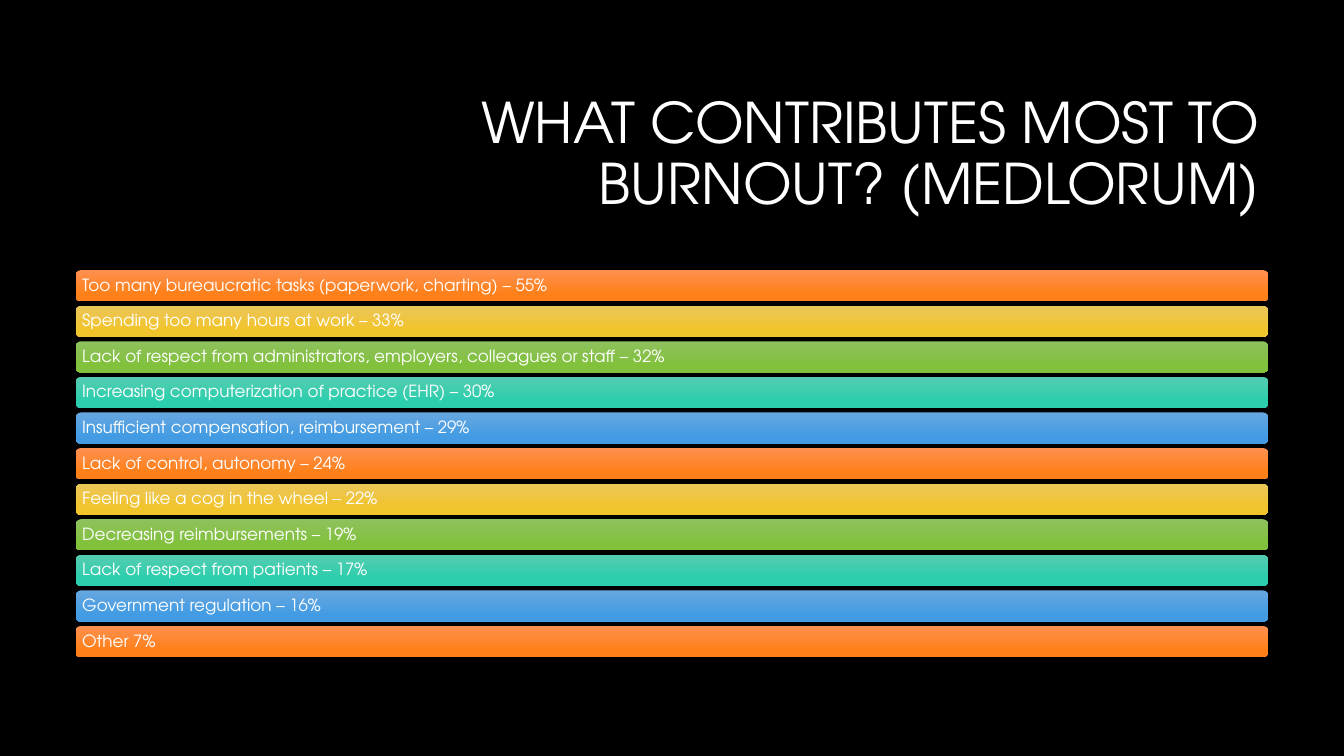
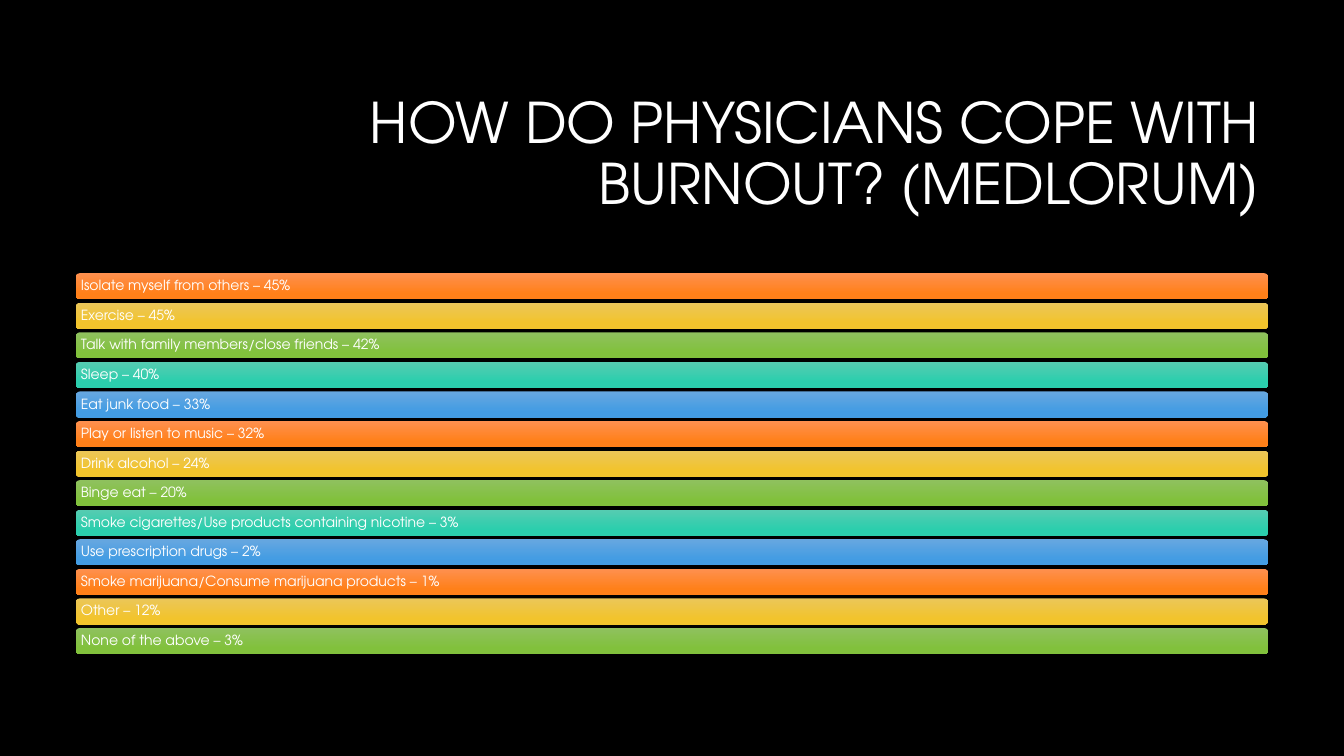
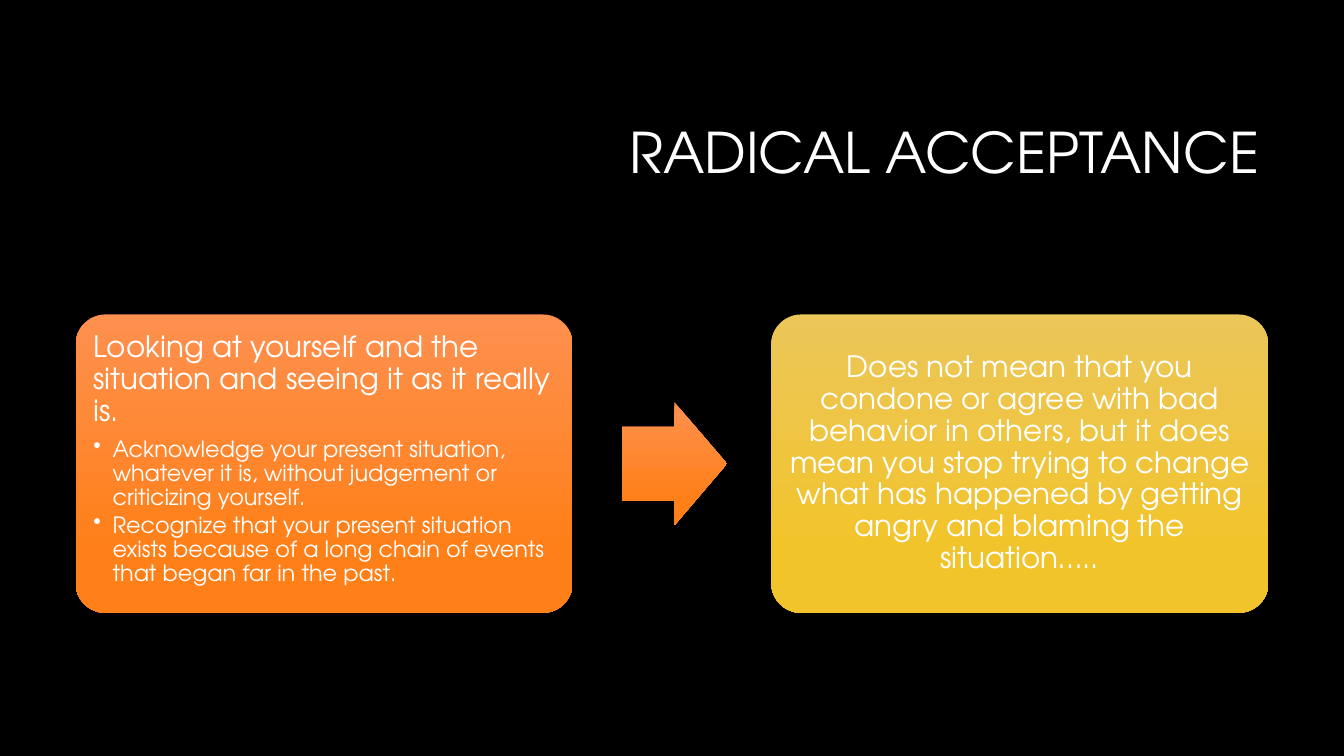
from pptx import Presentation
from pptx.dml.color import RGBColor
from pptx.enum.shapes import MSO_SHAPE
from pptx.enum.text import MSO_ANCHOR, MSO_AUTO_SIZE, PP_ALIGN
from pptx.oxml.ns import qn
from pptx.util import Inches, Pt

ROUNDED = MSO_SHAPE.ROUNDED_RECTANGLE
ARROW = MSO_SHAPE.RIGHT_ARROW
TOP, MIDDLE = MSO_ANCHOR.TOP, MSO_ANCHOR.MIDDLE
LEFT, CENTER, RIGHT = PP_ALIGN.LEFT, PP_ALIGN.CENTER, PP_ALIGN.RIGHT
NO_AUTOFIT = MSO_AUTO_SIZE.NONE

FONT = "TeX Gyre Adventor"
BLACK = RGBColor(0x00, 0x00, 0x00)
WHITE = RGBColor(0xFF, 0xFF, 0xFF)
# Each gradient runs from its top colour to its bottom colour
ORANGE = (RGBColor(0xFE, 0x90, 0x4F), RGBColor(0xFF, 0x80, 0x19))
YELLOW = (RGBColor(0xEB, 0xC6, 0x59), RGBColor(0xF2, 0xC4, 0x2C))
GREEN = (RGBColor(0x8F, 0xC1, 0x5E), RGBColor(0x81, 0xC1, 0x3C))
TEAL = (RGBColor(0x55, 0xCC, 0xB1), RGBColor(0x2B, 0xCE, 0xAD))
BLUE = (RGBColor(0x66, 0xA7, 0xE0), RGBColor(0x43, 0x9C, 0xE3))
BAR_COLOURS = [ORANGE, YELLOW, GREEN, TEAL, BLUE]

BODY_LEFT, BODY_WIDTH = 0.75, 11.83


def add_panel(page, kind, left, top, width, height, colours, margin=0, anchor=MIDDLE):
    """Add a borderless gradient shape whose text frame is ready to fill."""
    panel = page.shapes.add_shape(
        kind, Inches(left), Inches(top), Inches(width), Inches(height))
    panel.shadow.inherit = False
    panel.line.fill.background()
    panel.fill.gradient()
    panel.fill.gradient_angle = 270
    for stop, position, colour in zip(panel.fill.gradient_stops, (0, 0.78), colours):
        stop.position = position
        stop.color.rgb = colour
    frame = panel.text_frame
    frame.word_wrap = True
    frame.vertical_anchor = anchor
    frame.margin_left = frame.margin_right = Inches(margin)
    frame.margin_top = frame.margin_bottom = Inches(margin)
    return panel


def write(para, text, size, align=LEFT, space_after=0):
    """Format a paragraph and add its one run."""
    para.alignment = align
    para.line_spacing = 0.9
    para.space_before = Pt(0)
    para.space_after = Pt(space_after)
    span = para.add_run()
    span.text = text
    span.font.name = FONT
    span.font.size = Pt(size)
    span.font.color.rgb = WHITE


# Deck, background and title position
deck = Presentation()
deck.slide_width, deck.slide_height = Inches(13.33), Inches(7.5)
background = deck.slide_master.background.fill
background.solid()
background.fore_color.rgb = BLACK
layout = deck.slide_layouts.get_by_name("Title Only")
layout_title = layout.placeholders[0]
layout_title.left, layout_title.top = Inches(3.17), Inches(0.84)
layout_title.width, layout_title.height = Inches(9.42), Inches(1.41)

# Pages with their titles
pages = []
for title in ["WHAT CONTRIBUTES MOST TO BURNOUT? (MEDLORUM)",
              "HOW DO PHYSICIANS COPE WITH BURNOUT? (MEDLORUM)",
              "RADICAL ACCEPTANCE"]:
    page = deck.slides.add_slide(layout)
    frame = page.shapes.title.text_frame
    frame.auto_size = NO_AUTOFIT
    frame.vertical_anchor = MIDDLE
    write(frame.paragraphs[0], title, 40, RIGHT)
    pages.append(page)
causes_page, coping_page, acceptance_page = pages

# Survey answers as stacked bars
causes = [
    "Too many bureaucratic tasks (paperwork, charting) – 55%",
    "Spending too many hours at work – 33%",
    "Lack of respect from administrators, employers, colleagues or staff – 32%",
    "Increasing computerization of practice (EHR) – 30%",
    "Insufficient compensation, reimbursement – 29%",
    "Lack of control, autonomy – 24%",
    "Feeling like a cog in the wheel – 22%",
    "Decreasing reimbursements – 19%",
    "Lack of respect from patients – 17%",
    "Government regulation – 16%",
    "Other 7%",
]
coping = [
    "Isolate myself from others – 45%",
    "Exercise – 45%",
    "Talk with family members/close friends – 42%",
    "Sleep – 40%",
    "Eat junk food – 33%",
    "Play or listen to music – 32%",
    "Drink alcohol – 24%",
    "Binge eat – 20%",
    "Smoke cigarettes/Use products containing nicotine – 3%",
    "Use prescription drugs – 2%",
    "Smoke marijuana/Consume marijuana products – 1%",
    "Other – 12%",
    "None of the above – 3%",
]
for page, answers, first_top, last_top, height, size, margin in [
        (causes_page, causes, 2.68, 6.21, 0.31, 12, 0.05),
        (coping_page, coping, 2.71, 6.23, 0.26, 10, 0.04)]:
    pitch = (last_top - first_top) / (len(answers) - 1)
    for index, answer in enumerate(answers):
        bar = add_panel(page, ROUNDED, BODY_LEFT, first_top + index * pitch,
                        BODY_WIDTH, height, BAR_COLOURS[index % len(BAR_COLOURS)], margin)
        write(bar.text_frame.paragraphs[0], answer, size, space_after=0.35 * size)

# Two cards joined by an arrow
CARD_TOP, CARD_WIDTH, CARD_HEIGHT = 3.12, 4.93, 2.96
meaning_card = add_panel(acceptance_page, ROUNDED, BODY_LEFT, CARD_TOP,
                         CARD_WIDTH, CARD_HEIGHT, ORANGE, 0.09, TOP)
arrow = add_panel(acceptance_page, ARROW, 6.17, 3.99, 1.04, 1.22, ORANGE)
arrow.adjustments[0], arrow.adjustments[1] = 0.6, 0.5
limits_card = add_panel(acceptance_page, ROUNDED, BODY_LEFT + BODY_WIDTH - CARD_WIDTH,
                        CARD_TOP, CARD_WIDTH, CARD_HEIGHT, YELLOW, 0.09)
for card in (meaning_card, limits_card):
    card.adjustments[0] = 0.1

# Card text
write(meaning_card.text_frame.paragraphs[0],
      "Looking at yourself and the situation and seeing it as it really is.",
      21, space_after=7.35)
for point in [
        "Acknowledge your present situation, whatever it is, without judgement or "
        "criticizing yourself.",
        "Recognize that your present situation exists because of a long chain of events "
        "that began far in the past."]:
    para = meaning_card.text_frame.add_paragraph()
    para.level = 1
    properties = para._p.get_or_add_pPr()
    properties.set("marL", str(Inches(0.19)))
    properties.set("indent", str(-Inches(0.19)))
    bullet = properties.makeelement(qn("a:buChar"), {"char": "•"})
    properties.append(bullet)
    write(para, point, 16, space_after=2.4)
write(limits_card.text_frame.paragraphs[0],
      "Does not mean that you condone or agree with bad behavior in others, but it does "
      "mean you stop trying to change what has happened by getting angry and blaming the "
      "situation…..",
      21, CENTER, 7.35)

deck.save("out.pptx")
